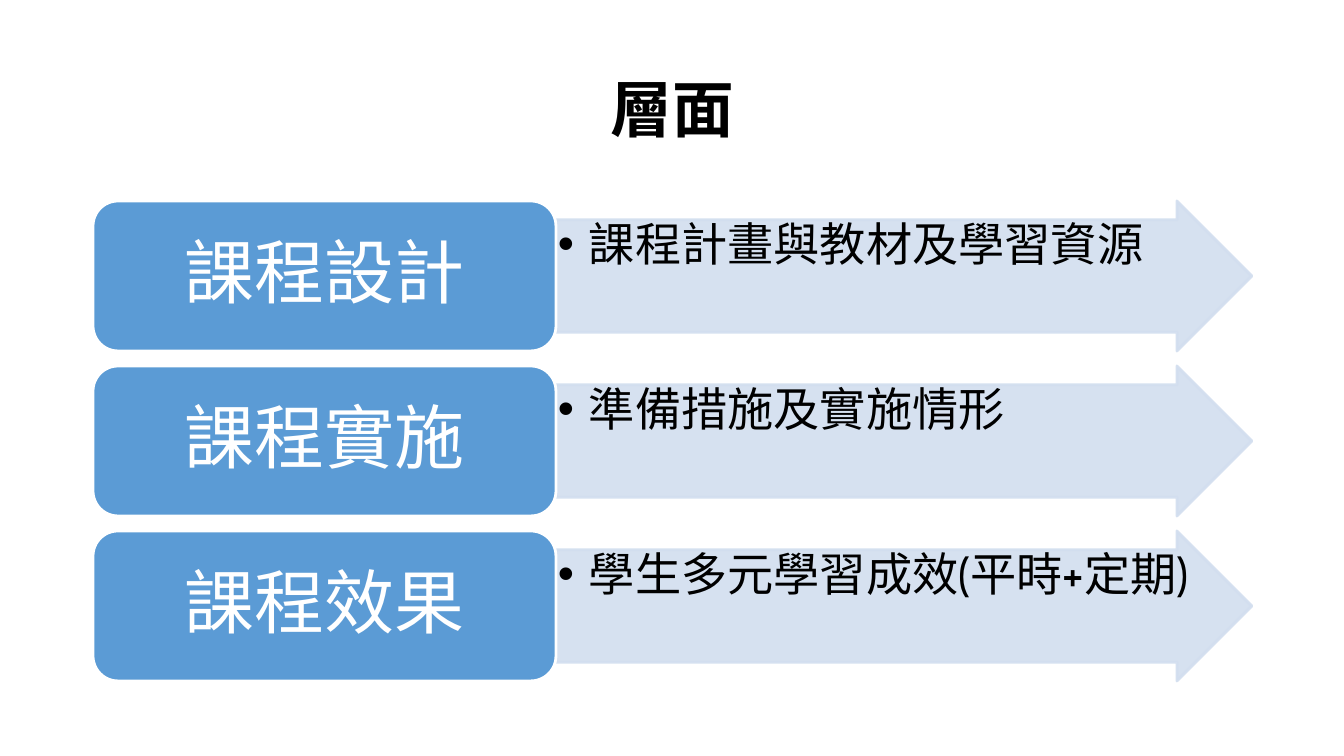
from lxml import etree
from pptx import Presentation
from pptx import util as u
from pptx.dml.color import RGBColor
from pptx.enum import shapes, text
from pptx.oxml.ns import qn

TITLE = "層面"
ASPECTS = [
    ("課程設計", "課程計畫與教材及學習資源"),
    ("課程實施", "準備措施及實施情形"),
    ("課程效果", "學生多元學習成效(平時+定期)"),
]
COLORS = {"ink": "000000", "white": "FFFFFF", "blue": "5B9BD5", "pale": "D2DEEF"}
FONT = "Cabin"
PALE_OPACITY = 90

# Lengths in px
SLIDE_W, SLIDE_H = 1344, 756
LEFT, TITLE_TOP, TITLE_H = 93, 40, 146
ROWS_TOP, ROW_H, ROW_GAP = 201, 150, 15
LABEL_W, ARROW_W = 463, 696
INDENT = 31


def px(n):
    return u.Emu(round(n * 914400 / 100.8))


def place(shape, left, top, width, height):
    shape.left, shape.top = px(left), px(top)
    shape.width, shape.height = px(width), px(height)


def write(shape, words, size, color, align, anchor, bold=False):
    frame = shape.text_frame
    frame.text = words
    frame.word_wrap = True
    frame.auto_size = text.MSO_AUTO_SIZE.NONE
    frame.vertical_anchor = anchor
    paragraph = frame.paragraphs[0]
    paragraph.alignment = align
    paragraph.line_spacing = 0.9
    run = paragraph.runs[0]
    run.font.name = FONT
    run.font.size = u.Pt(size)
    run.font.bold = bold
    run.font.color.rgb = RGBColor.from_string(COLORS[color])
    properties = run._r.get_or_add_rPr()
    properties.set("lang", "zh-TW")
    etree.SubElement(properties, qn("a:ea"), typeface=FONT)
    return paragraph


def set_margins(shape, across, down):
    frame = shape.text_frame
    frame.margin_left = frame.margin_right = px(across)
    frame.margin_top = frame.margin_bottom = px(down)


def add_bullet(paragraph):
    properties = paragraph._p.get_or_add_pPr()
    properties.set("marL", str(px(INDENT)))
    properties.set("indent", str(-px(INDENT)))
    etree.SubElement(properties, qn("a:buFont"), typeface="Arial")
    etree.SubElement(properties, qn("a:buChar"), char="•")


def add_block(slide, preset, box, fill, line):
    shape = slide.shapes.add_shape(preset, *map(px, box))
    shape.shadow.inherit = False
    shape.fill.solid()
    shape.fill.fore_color.rgb = RGBColor.from_string(COLORS[fill])
    shape.line.color.rgb = RGBColor.from_string(COLORS[line])
    shape.line.width = u.Pt(2)
    return shape


def fade(shape):
    """Make the fill and line of a shape slightly transparent."""
    for color in shape._element.spPr.iter(qn("a:srgbClr")):
        etree.SubElement(color, qn("a:alpha"), val=str(PALE_OPACITY * 1000))


def add_row(slide, top, label, detail):
    arrow = add_block(slide, shapes.MSO_SHAPE.RIGHT_ARROW,
                      (LEFT + LABEL_W, top, ARROW_W, ROW_H), "pale", "pale")
    arrow.adjustments[0], arrow.adjustments[1] = 0.75, 0.5
    fade(arrow)
    set_margins(arrow, 2, 2)
    add_bullet(write(arrow, detail, 33, "ink",
                     text.PP_ALIGN.LEFT, text.MSO_ANCHOR.TOP))

    name = add_block(slide, shapes.MSO_SHAPE.ROUNDED_RECTANGLE,
                     (LEFT, top, LABEL_W, ROW_H), "blue", "white")
    set_margins(name, 21, 10)
    write(name, label, 50, "white", text.PP_ALIGN.CENTER, text.MSO_ANCHOR.MIDDLE)


def main():
    deck = Presentation()
    deck.slide_width, deck.slide_height = px(SLIDE_W), px(SLIDE_H)
    slide = deck.slides.add_slide(deck.slide_layouts[5])

    title = slide.shapes.title
    place(title, LEFT, TITLE_TOP, LABEL_W + ARROW_W, TITLE_H)
    write(title, TITLE, 44, "ink", text.PP_ALIGN.CENTER,
          text.MSO_ANCHOR.MIDDLE, bold=True)

    for row, (label, detail) in enumerate(ASPECTS):
        add_row(slide, ROWS_TOP + row * (ROW_H + ROW_GAP), label, detail)

    deck.save("out.pptx")


if __name__ == "__main__":
    main()
